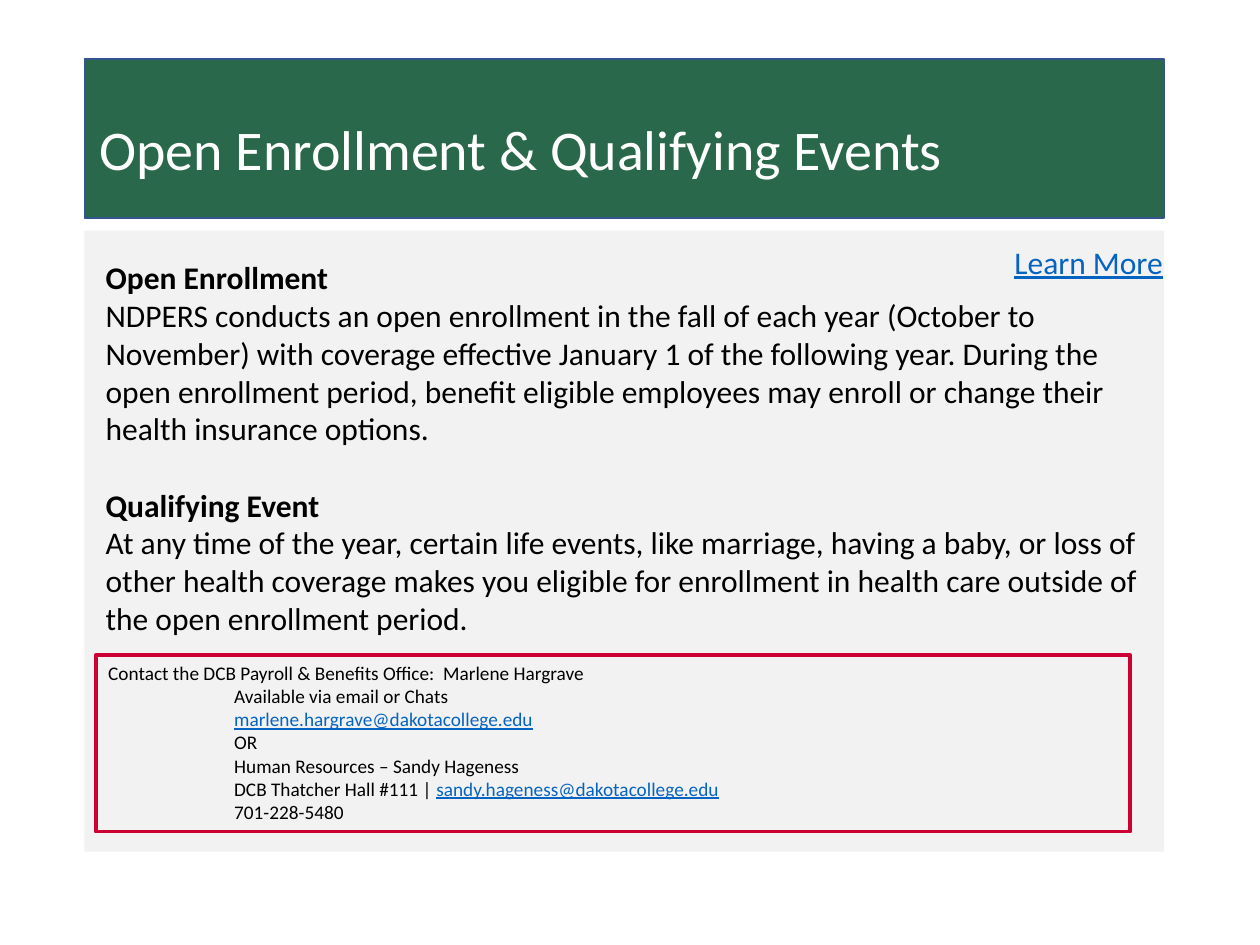
import pptx
import pptx.dml.color
import pptx.enum.shapes
import pptx.enum.text
import pptx.util

Inches = pptx.util.Inches
Pt = pptx.util.Pt

BLACK = "000000"
LINK = "0563C1"


def color(value):
    return pptx.dml.color.RGBColor.from_string(value)


def format_run(run, size, value=BLACK, bold=False):
    run.font.name = "Calibri"
    run.font.size = Pt(size)
    run.font.bold = bold
    run.font.underline = value == LINK
    run.font.color.rgb = color(value)


presentation = pptx.Presentation()
presentation.slide_width = Inches(10)
presentation.slide_height = Inches(7.5)
slide = presentation.slides.add_slide(presentation.slide_layouts[6])

# Title band, body panel and contact frame: left, top, width, height, fill, line, line width
rectangles = []
for left, top, width, height, fill, line, line_width in [
    (0.67, 0.47, 8.57, 1.26, "2A684B", "325491", 1),
    (0.67, 1.83, 8.57, 4.93, "F2F2F2", None, 0),
    (0.76, 5.2, 8.21, 1.4, None, "CC0033", 2.25),
]:
    shape = slide.shapes.add_shape(
        pptx.enum.shapes.MSO_SHAPE.RECTANGLE,
        Inches(left), Inches(top), Inches(width), Inches(height))
    shape.shadow.inherit = False
    if fill:
        shape.fill.solid()
        shape.fill.fore_color.rgb = color(fill)
    else:
        shape.fill.background()
    if line:
        shape.line.color.rgb = color(line)
        shape.line.width = Pt(line_width)
    else:
        shape.line.fill.background()
    rectangles.append(shape)
contact_frame = rectangles[2].text_frame

# Text boxes for the title, the body and the link
text_frames = []
for left, top, width, height in [
    (0.69, 0.48, 8.62, 1.45),
    (0.74, 2, 8.48, 3.13),
    (7.93, 1.88, 1.42, 0.4),
]:
    box = slide.shapes.add_textbox(
        Inches(left), Inches(top), Inches(width), Inches(height))
    box.text_frame.word_wrap = True
    text_frames.append(box.text_frame)
title_frame, body_frame, link_frame = text_frames

# Title
title_frame.vertical_anchor = pptx.enum.text.MSO_ANCHOR.MIDDLE
title_frame.text = "Open Enrollment & Qualifying Events"
title_frame.paragraphs[0].line_spacing = 0.9
format_run(title_frame.paragraphs[0].runs[0], 32, "FFFFFF")

# Body: bold headings, each followed by its paragraph
sections = [
    ("Open Enrollment",
     "NDPERS conducts an open enrollment in the fall of each year (October to "
     "November) with coverage effective January 1 of the following year. During "
     "the open enrollment period, benefit eligible employees may enroll or "
     "change their health insurance options."),
    ("Qualifying Event",
     "At any time of the year, certain life events, like marriage, having a "
     "baby, or loss of other health coverage makes you eligible for enrollment "
     "in health care outside of the open enrollment period."),
]
body_frame.text = "\n".join(text for section in sections for text in section)
for index, paragraph in enumerate(body_frame.paragraphs):
    format_run(paragraph.runs[0], 18, bold=index % 2 == 0)
body_frame.paragraphs[2].space_before = Pt(22)

# Contact details: the first line is flush left, the others are indented
contact_lines = [
    [("Contact the DCB Payroll & Benefits Office:  Marlene Hargrave", BLACK)],
    [("Available via email or Chats", BLACK)],
    [("marlene.hargrave@dakotacollege.edu", LINK)],
    [("OR", BLACK)],
    [("Human Resources – Sandy Hageness", BLACK)],
    [("DCB Thatcher Hall #111 | ", BLACK),
     ("sandy.hageness@dakotacollege.edu", LINK)],
    [("701-228-5480", BLACK)],
]
contact_frame.word_wrap = True
contact_frame.vertical_anchor = pptx.enum.text.MSO_ANCHOR.TOP
for index, parts in enumerate(contact_lines):
    paragraph = contact_frame.add_paragraph() if index else contact_frame.paragraphs[0]
    paragraph.alignment = pptx.enum.text.PP_ALIGN.LEFT
    if index:
        paragraph.level = 2
        properties = paragraph._p.get_or_add_pPr()
        properties.set("marL", str(Inches(1)))
        properties.set("indent", "0")
    for text, value in parts:
        run = paragraph.add_run()
        run.text = text
        format_run(run, 11, value)

# Link at the top right
link_frame.text = "Learn More"
link_frame.paragraphs[0].alignment = pptx.enum.text.PP_ALIGN.CENTER
format_run(link_frame.paragraphs[0].runs[0], 18, LINK)

presentation.save("out.pptx")
